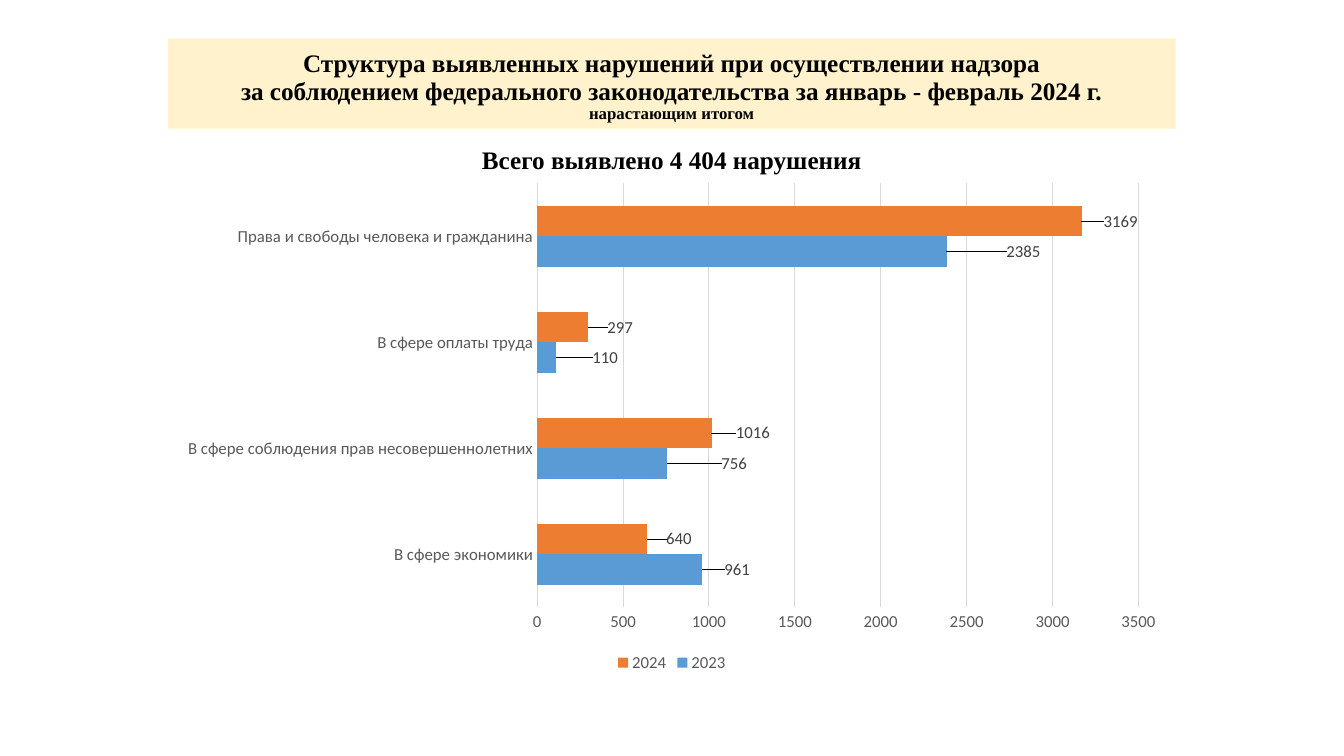
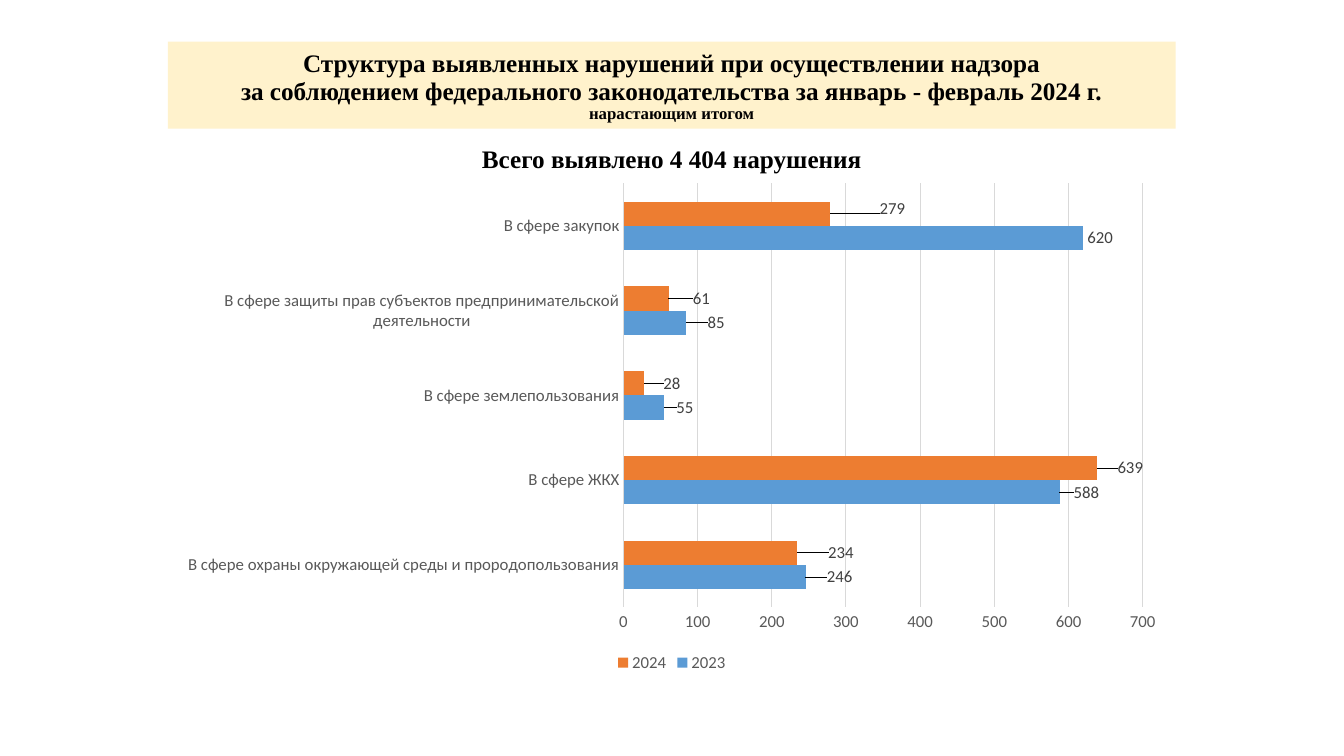
from lxml import etree
from pptx import Presentation
from pptx.chart.data import CategoryChartData
from pptx.dml.color import RGBColor
from pptx.enum.chart import XL_CHART_TYPE as ChartType, XL_LABEL_POSITION as LabelPos
from pptx.enum.chart import XL_LEGEND_POSITION as LegendPos, XL_TICK_MARK as TickMark
from pptx.enum.shapes import MSO_SHAPE as Shape
from pptx.enum.text import MSO_ANCHOR as Anchor, PP_ALIGN as Align
from pptx.oxml.ns import qn
from pptx.util import Cm, Pt

COLORS = {
    "band": "FFF2CC", "title": "000000", "axis": "595959", "label": "404040",
    "grid": "D9D9D9", "2023": "5B9BD5", "2024": "ED7D31",
}
TITLE_FONT = {"name": "Times New Roman", "bold": True}
CHART_FONT = {"name": "Calibri", "size": Pt(12), "bold": False}

# Shared frame of both slides
LEFT, WIDTH = Cm(4.23), Cm(25.4)
BAND_BOTTOM = Cm(3.24)
TITLE_LINES = [
    ("Структура выявленных нарушений при осуществлении надзора", 18),
    ("за соблюдением федерального законодательства за январь - февраль 2024 г.", 18),
    ("нарастающим итогом", 12),
]
TOTAL_LINES = [("Всего выявлено 4 404 нарушения", 18)]

# Per category: name, then (value, label shift right and down in % of the chart) by year
SLIDES = [
    {
        "band_top": Cm(0.97), "total_top": Cm(3.66),
        "rows": [
            ("В сфере экономики", (961, 1.8, 0), (640, 1.5, 0)),
            ("В сфере соблюдения прав несовершеннолетних", (756, 5, 0), (1016, 2, 0)),
            ("В сфере оплаты труда", (110, 3.2, 0), (297, 1.5, 0)),
            ("Права и свободы человека и гражданина", (2385, 5.5, 0), (3169, 1.8, 0)),
        ],
    },
    {
        "band_top": Cm(1.05), "total_top": Cm(3.63),
        "rows": [
            ("В сфере охраны окружающей среды и прородопользования",
             (246, 1.7, 0), (234, 2.7, 0)),
            ("В сфере ЖКХ", (588, 1, 0), (639, 1.6, 0)),
            ("В сфере землепользования", (55, 0.8, 0), (28, 1.5, 0)),
            ("В сфере защиты прав субъектов предпринимательской деятельности",
             (85, 1.7, 0), (61, 2, 0)),
            ("В сфере закупок", (620, 0, 0), (279, 4.5, -1)),
        ],
    },
]


def style_font(font, values, color):
    for name, value in values.items():
        setattr(font, name, value)
    font.color.rgb = RGBColor.from_string(COLORS[color])


def write_lines(frame, lines, spacing, anchor):
    frame.word_wrap = True
    frame.vertical_anchor = anchor
    for number, (text, size) in enumerate(lines):
        line = frame.add_paragraph() if number else frame.paragraphs[0]
        line.alignment = Align.CENTER
        line.line_spacing = spacing
        run = line.add_run()
        run.text = text
        style_font(run.font, {**TITLE_FONT, "size": Pt(size)}, "title")


prs = Presentation()
prs.slide_width, prs.slide_height = Cm(33.87), Cm(19.05)

for content in SLIDES:
    slide = prs.slides.add_slide(prs.slide_layouts[6])

    # Title band
    top = content["band_top"]
    band = slide.shapes.add_shape(Shape.RECTANGLE, LEFT, top, WIDTH, BAND_BOTTOM - top)
    band.shadow.inherit = False
    band.fill.solid()
    band.fill.fore_color.rgb = RGBColor.from_string(COLORS["band"])
    band.line.fill.background()
    write_lines(band.text_frame, TITLE_LINES, 0.9, Anchor.BOTTOM)

    # Total
    total = slide.shapes.add_textbox(LEFT, content["total_top"], WIDTH, Cm(0.91))
    write_lines(total.text_frame, TOTAL_LINES, 0.8, Anchor.TOP)

    # Violations by sphere
    spheres, *years = zip(*content["rows"])
    data = CategoryChartData()
    data.categories = spheres
    for year, cells in zip(("2023", "2024"), years):
        data.add_series(year, [value for value, _, _ in cells])
    violations = slide.shapes.add_chart(
        ChartType.BAR_CLUSTERED, LEFT, Cm(4.37), WIDTH, Cm(12.68), data).chart
    violations.has_title = False
    style_font(violations.font, CHART_FONT, "axis")

    # Legend and axes
    violations.has_legend = True
    legend = violations.legend
    legend.position = LegendPos.BOTTOM
    legend.include_in_layout = False
    style_font(legend.font, CHART_FONT, "axis")
    for axis in (violations.category_axis, violations.value_axis):
        axis.major_tick_mark = axis.minor_tick_mark = TickMark.NONE
        axis.format.line.fill.background()
        style_font(axis.tick_labels.font, CHART_FONT, "axis")
    violations.category_axis.has_major_gridlines = False
    violations.value_axis.has_major_gridlines = True
    grid = violations.value_axis.major_gridlines.format.line
    grid.width = Pt(0.75)
    grid.color.rgb = RGBColor.from_string(COLORS["grid"])

    # Bars with shifted value labels
    bars = violations.plots[0]
    bars.gap_width = 150
    bars.vary_by_categories = False
    for series, cells in zip(bars.series, years):
        series.format.fill.solid()
        series.format.fill.fore_color.rgb = RGBColor.from_string(COLORS[series.name])
        series.data_labels.show_value = True
        style_font(series.data_labels.font, CHART_FONT, "label")
        for index, (_, right, down) in enumerate(cells):
            label = series.points[index].data_label
            label.position = LabelPos.OUTSIDE_END
            style_font(label.font, CHART_FONT, "label")
        labels = series.data_labels._element.findall(qn("c:dLbl"))
        for label, (_, right, down) in zip(labels, cells):
            layout = etree.Element(qn("c:layout"))
            manual = etree.SubElement(layout, qn("c:manualLayout"))
            for tag, shift in (("c:x", right), ("c:y", down)):
                etree.SubElement(manual, qn(tag)).set("val", str(shift / 100))
            label.insert(1, layout)

prs.save("out.pptx")
